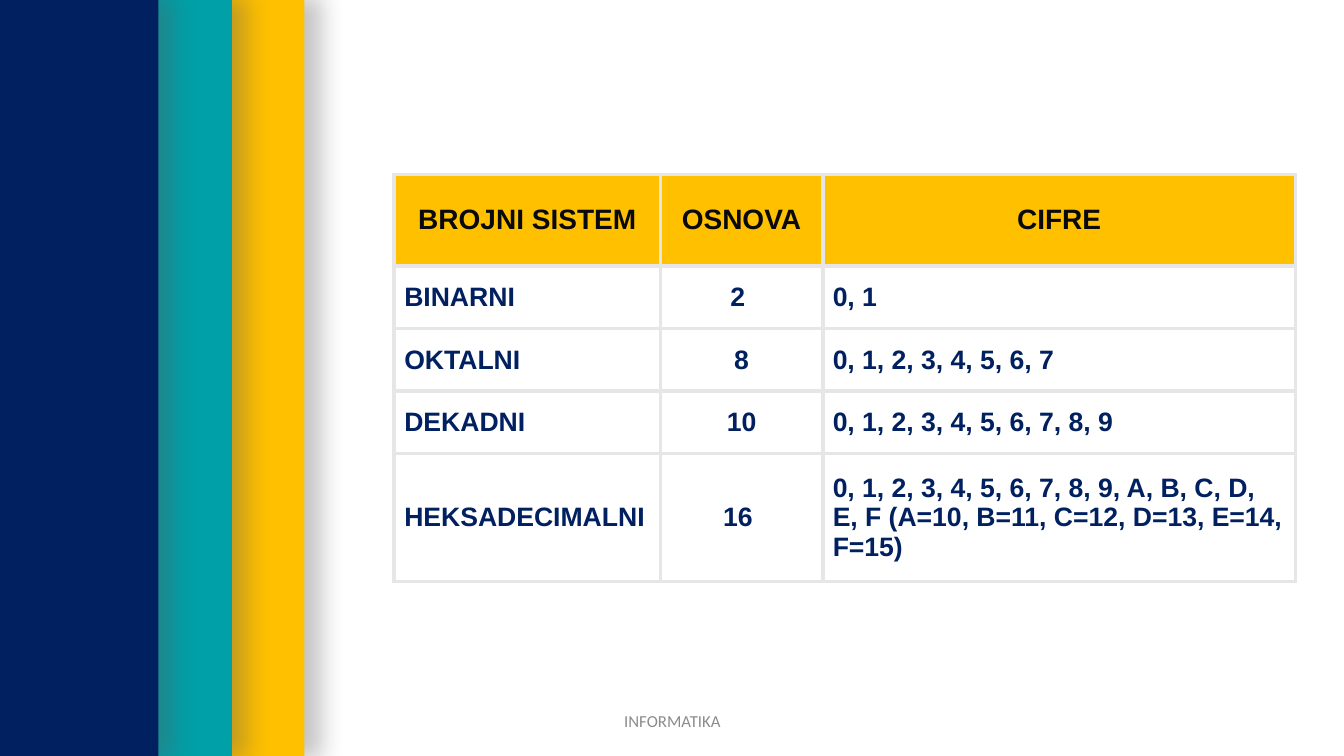
from pptx import Presentation
from pptx import util as u
from pptx.dml.color import RGBColor
from pptx.enum import shapes, text
from pptx.oxml import parse_xml
from pptx.oxml.ns import nsdecls, qn

BANDS = [(-9.62, 12.64, "FFC000"), (-8.58, 10.88, "00A0A8"),
         (-8.73, 10.3, "002060")]
ROWS = [
    ("BROJNI SISTEM", "OSNOVA", "CIFRE"),
    ("BINARNI", "2 ", "0, 1"),
    ("OKTALNI", "8", "0, 1, 2, 3, 4, 5, 6, 7"),
    ("DEKADNI", "10", "0, 1, 2, 3, 4, 5, 6, 7, 8, 9"),
    ("HEKSADECIMALNI", "16 ",
     "0, 1, 2, 3, 4, 5, 6, 7, 8, 9, A, B, C, D, E, F "
     "(A=10, B=11, C=12, D=13, E=14, F=15)"),
]
WIDTHS = [2.64, 1.61, 4.69]
HEIGHTS = [0.91, 0.62, 0.62, 0.62, 1.27]
FOOTER = "INFORMATIKA"
HIGH = 7.5


def paint(fill, color):
    fill.solid()
    fill.fore_color.rgb = RGBColor.from_string(color)


def write(frame, words, size, face, color, bold, center):
    par = frame.paragraphs[0]
    par.text = words
    par.alignment = text.PP_ALIGN.CENTER if center else text.PP_ALIGN.LEFT
    par.font.size = u.Pt(size)
    par.font.name = face
    par.font.bold = bold
    paint(par.font.fill, color)


def add_band(slide, left, width, color):
    band = slide.shapes.add_shape(shapes.MSO_SHAPE.RECTANGLE, u.Inches(left),
                                  0, u.Inches(width), u.Inches(HIGH))
    paint(band.fill, color)
    band.line.fill.background()
    band.shadow.inherit = False
    band._element.spPr.find(qn("a:effectLst")).append(parse_xml(
        f'<a:outerShdw {nsdecls("a")} blurRad="{u.Pt(17)}" dist="{u.Pt(3)}" '
        'dir="0" sx="101000" sy="101000" algn="l" rotWithShape="0">'
        '<a:srgbClr val="595959"><a:alpha val="35000"/></a:srgbClr>'
        '</a:outerShdw>'))


def add_edges(cell):
    props = cell._tc.get_or_add_tcPr()
    for side in "LRTB":
        props.append(parse_xml(
            f'<a:ln{side} {nsdecls("a")} w="{u.Pt(3)}"><a:solidFill>'
            f'<a:srgbClr val="E7E6E6"/></a:solidFill></a:ln{side}>'))


def add_grid(slide):
    grid = slide.shapes.add_table(
        len(ROWS), len(WIDTHS), u.Inches(3.91), u.Inches(1.73),
        u.Inches(sum(WIDTHS)), u.Inches(sum(HEIGHTS))).table
    grid.horz_banding = False
    for col, width in zip(grid.columns, WIDTHS):
        col.width = u.Inches(width)
    for r, (row, height) in enumerate(zip(grid.rows, HEIGHTS)):
        row.height = u.Inches(height)
        head = r == 0
        for c, cell in enumerate(row.cells):
            add_edges(cell)
            paint(cell.fill, "FFC000" if head else "FFFFFF")
            cell.vertical_anchor = text.MSO_ANCHOR.MIDDLE
            write(cell.text_frame, ROWS[r][c], 20 if head else 19, "Arial",
                  "0A0A0E" if head else "002060", True, head or c == 1)


def main():
    deck = Presentation()
    deck.slide_width, deck.slide_height = u.Inches(13.33), u.Inches(HIGH)
    slide = deck.slides.add_slide(deck.slide_layouts[6])
    for left, width, color in BANDS:
        add_band(slide, left, width, color)
    add_grid(slide)
    foot = slide.shapes.add_textbox(u.Inches(4.42), u.Inches(6.95),
                                    u.Inches(4.5), u.Inches(0.4)).text_frame
    foot.word_wrap = True
    foot.vertical_anchor = text.MSO_ANCHOR.MIDDLE
    write(foot, FOOTER, 12, "Calibri", "8C8C8C", False, True)
    deck.save("out.pptx")


if __name__ == "__main__":
    main()
